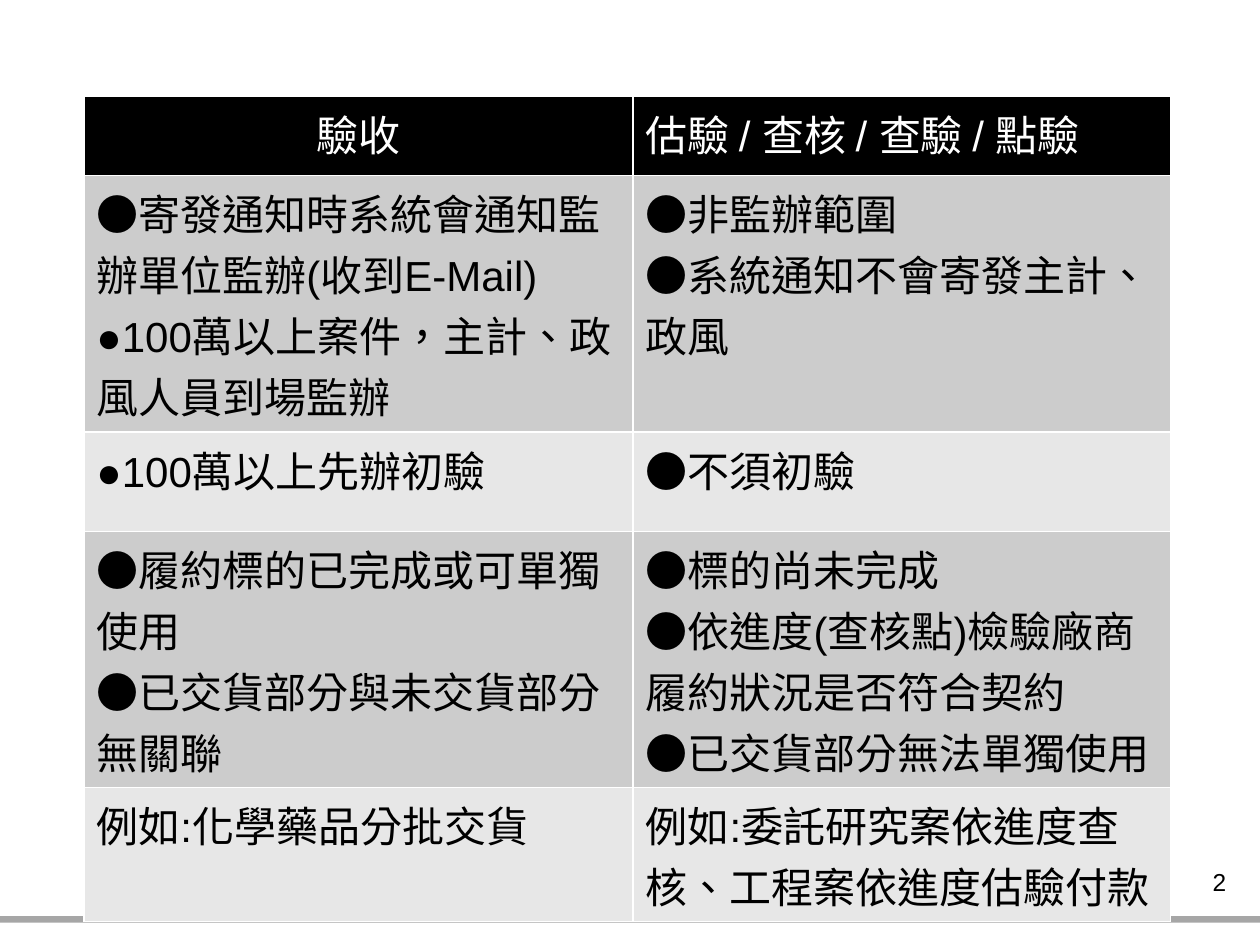
"""Build the slide comparing acceptance with interim inspection."""
from lxml.etree import SubElement
from pptx import Presentation
from pptx.dml.color import RGBColor
from pptx.enum.lang import MSO_LANGUAGE_ID
from pptx.enum.shapes import MSO_SHAPE
from pptx.enum.text import PP_ALIGN
from pptx.oxml.ns import qn
from pptx.util import Cm, Pt

COLORS = {
    "white": "FFFFFF",
    "black": "000000",
    "bar": "A6A6A6",
    "dark_band": "CCCCCC",
    "light_band": "E7E7E7",
}
COMPARISON = [
    (["驗收"], ["估驗 / 查核 / 查驗 / 點驗"]),
    (
        ["●寄發通知時系統會通知監辦單位監辦(收到E-Mail)",
         "●100萬以上案件，主計、政風人員到場監辦"],
        ["●非監辦範圍", "●系統通知不會寄發主計、政風"],
    ),
    (["●100萬以上先辦初驗"], ["●不須初驗"]),
    (
        ["●履約標的已完成或可單獨使用", "●已交貨部分與未交貨部分無關聯"],
        ["●標的尚未完成",
         "●依進度(查核點)檢驗廠商履約狀況是否符合契約",
         "●已交貨部分無法單獨使用"],
    ),
    (["例如:化學藥品分批交貨"], ["例如:委託研究案依進度查核、工程案依進度估驗付款"]),
]
COLUMN_WIDTHS = [11.07, 10.84]
ROW_HEIGHTS = [1.6, 5.17, 2.0, 5.17, 2.7]


def add_line(paragraph, text, size, color):
    run = paragraph.add_run()
    run.text = text
    run.font.size = Pt(size)
    run.font.name = "Arial"
    run.font.language_id = MSO_LANGUAGE_ID.TRADITIONAL_CHINESE
    run.font.color.rgb = RGBColor.from_string(COLORS[color])


def add_border(cell, side):
    line = SubElement(cell._tc.get_or_add_tcPr(), qn(f"a:ln{side}"), w=str(Pt(1)))
    fill = SubElement(line, qn("a:solidFill"))
    SubElement(fill, qn("a:srgbClr"), val=COLORS["white"])


deck = Presentation()
deck.slide_width, deck.slide_height = Cm(25.4), Cm(19.05)
slide = deck.slides.add_slide(deck.slide_layouts[6])

footer_bar = slide.shapes.add_shape(
    MSO_SHAPE.RECTANGLE, Cm(-0.02), Cm(18.47), Cm(25.44), Cm(0.13))
footer_bar.shadow.inherit = False
footer_bar.fill.solid()
footer_bar.fill.fore_color.rgb = RGBColor.from_string(COLORS["bar"])
footer_bar.line.fill.background()

page_number = slide.shapes.add_textbox(Cm(19.05), Cm(17.35), Cm(5.92), Cm(1.32)).text_frame
page_number.word_wrap = True
page_number.paragraphs[0].alignment = PP_ALIGN.RIGHT
add_line(page_number.paragraphs[0], "2", 14, "black")

comparison = slide.shapes.add_table(
    len(ROW_HEIGHTS), len(COLUMN_WIDTHS), Cm(1.69), Cm(1.94),
    Cm(sum(COLUMN_WIDTHS)), Cm(sum(ROW_HEIGHTS))).table
comparison.first_row = False
comparison.horz_banding = False
for column, width in zip(comparison.columns, COLUMN_WIDTHS):
    column.width = Cm(width)

for row_index, (height, topics) in enumerate(zip(ROW_HEIGHTS, COMPARISON)):
    comparison.rows[row_index].height = Cm(height)
    is_header = row_index == 0
    band = "black" if is_header else ("light_band", "dark_band")[row_index % 2]
    for column_index, lines in enumerate(topics):
        cell = comparison.cell(row_index, column_index)
        for side in "LRTB":
            add_border(cell, side)
        cell.fill.solid()
        cell.fill.fore_color.rgb = RGBColor.from_string(COLORS[band])
        for line_index, text in enumerate(lines):
            frame = cell.text_frame
            paragraph = frame.add_paragraph() if line_index else frame.paragraphs[0]
            add_line(paragraph, text, 24, "white" if is_header else "black")

comparison.cell(0, 0).text_frame.paragraphs[0].alignment = PP_ALIGN.CENTER

deck.save("out.pptx")
